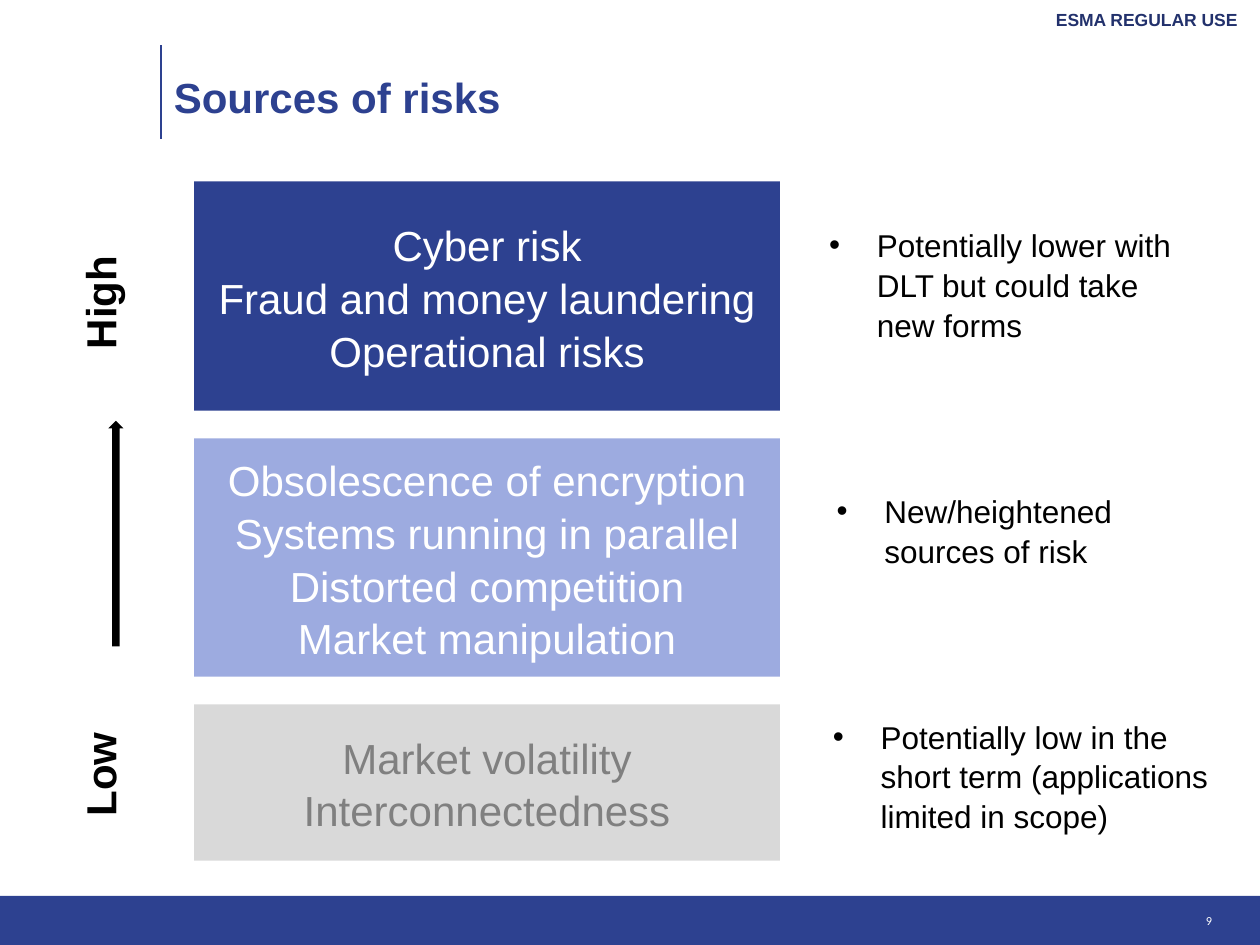
from dataclasses import dataclass

from lxml.etree import SubElement
from pptx import Presentation
from pptx.dml.color import RGBColor
from pptx.enum.shapes import MSO_CONNECTOR, MSO_SHAPE
from pptx.enum.text import MSO_ANCHOR, PP_ALIGN
from pptx.oxml.ns import qn
from pptx.util import Inches, Pt

NAVY = "2D4190"
BLACK = "000000"
WHITE = "FFFFFF"
LINE_SPACING = 1.05


@dataclass
class Area:
    left: float
    top: float
    width: float
    height: float

    def lengths(self) -> tuple:
        return tuple(Inches(n) for n in (self.left, self.top, self.width, self.height))


@dataclass
class Style:
    size: float
    color: str
    bold: bool = False
    font: str = "Arial"
    align: PP_ALIGN = PP_ALIGN.LEFT


@dataclass
class RiskLevel:
    top: float
    height: float
    fill: str
    text_color: str
    risks: list[str]
    note: str
    note_area: Area


LEVELS = [
    RiskLevel(1.44, 1.82, NAVY, WHITE,
              ["Cyber risk", "Fraud and money laundering", "Operational risks"],
              "Potentially lower with DLT but could take new forms",
              Area(6.58, 1.78, 2.84, 0.89)),
    RiskLevel(3.48, 1.89, "9DABE0", WHITE,
              ["Obsolescence of encryption", "Systems running in parallel",
               "Distorted competition", "Market manipulation"],
              "New/heightened sources of risk",
              Area(6.64, 3.89, 3, 0.56)),
    RiskLevel(5.59, 1.24, "D9D9D9", "808080",
              ["Market volatility", "Interconnectedness"],
              "Potentially low in the short term (applications limited in scope)",
              Area(6.61, 5.68, 3, 0.56)),
]

SCALE_LABELS = [("High", Area(0.59, 1.88, 0.4, 0.89)), ("Low", Area(0.59, 5.45, 0.4, 1.03))]


def rgb(color: str) -> RGBColor:
    return RGBColor.from_string(color)


def write(para, text: str, style: Style) -> None:
    para.alignment = style.align
    span = para.add_run()
    span.text = text
    span.font.name = style.font
    span.font.size = Pt(style.size)
    span.font.bold = style.bold
    span.font.color.rgb = rgb(style.color)


def clear_margins(frame) -> None:
    frame.margin_left = frame.margin_top = frame.margin_right = frame.margin_bottom = 0
    frame.word_wrap = True


def add_text(page, area: Area, text: str, style: Style):
    box = page.shapes.add_textbox(*area.lengths())
    clear_margins(box.text_frame)
    write(box.text_frame.paragraphs[0], text, style)
    return box


def add_block(page, kind: MSO_SHAPE, area: Area, fill: str):
    block = page.shapes.add_shape(kind, *area.lengths())
    block.shadow.inherit = False
    block.fill.solid()
    block.fill.fore_color.rgb = rgb(fill)
    block.line.fill.background()
    return block


def add_note(page, level: RiskLevel) -> None:
    box = add_text(page, level.note_area, level.note, Style(18, BLACK))
    para = box.text_frame.paragraphs[0]
    para.line_spacing = LINE_SPACING
    properties = para._p.get_or_add_pPr()
    properties.set("marL", str(Inches(0.38)))
    properties.set("indent", str(Inches(-0.38)))
    SubElement(properties, qn("a:buFont")).set("typeface", "Arial")
    SubElement(properties, qn("a:buChar")).set("char", "•")


def add_level(page, level: RiskLevel) -> None:
    block = add_block(page, MSO_SHAPE.RECTANGLE,
                      Area(1.54, level.top, 4.65, level.height), level.fill)
    frame = block.text_frame
    frame.word_wrap = True
    frame.vertical_anchor = MSO_ANCHOR.MIDDLE
    style = Style(24, level.text_color, align=PP_ALIGN.CENTER)
    for index, risk in enumerate(level.risks):
        para = frame.add_paragraph() if index else frame.paragraphs[0]
        para.line_spacing = LINE_SPACING
        write(para, risk, style)


def add_rule(page) -> None:
    rule = page.shapes.add_connector(
        MSO_CONNECTOR.STRAIGHT, Inches(1.28), Inches(1.1), Inches(1.28), Inches(0.36))
    rule.line.color.rgb = rgb(NAVY)
    rule.line.width = Pt(1)
    SubElement(rule._element.spPr, qn("a:effectLst"))


def set_title(page, text: str) -> None:
    title = page.shapes.title
    title.left, title.top, title.width, title.height = Area(1.38, 0.53, 8.27, 0.47).lengths()
    clear_margins(title.text_frame)
    title.text_frame.vertical_anchor = MSO_ANCHOR.MIDDLE
    write(title.text_frame.paragraphs[0], text, Style(24, NAVY, bold=True))


def main() -> None:
    deck = Presentation()
    deck.slide_width, deck.slide_height = Inches(10), Inches(7.5)
    page = deck.slides.add_slide(deck.slide_layouts[5])

    add_block(page, MSO_SHAPE.RECTANGLE, Area(0, 7.11, 10, 0.39), NAVY)
    add_rule(page)
    add_text(page, Area(6.65, 0.07, 3.17, 0.16), "ESMA REGULAR USE",
             Style(10, "22316C", bold=True, align=PP_ALIGN.RIGHT))
    set_title(page, "Sources of risks")
    add_text(page, Area(8.05, 7.25, 1.57, 0.11), "9",
             Style(7, WHITE, font="Calibri", align=PP_ALIGN.RIGHT))

    for level in LEVELS:
        add_level(page, level)
        add_note(page, level)

    for text, area in SCALE_LABELS:
        label = add_text(page, area, text, Style(24, BLACK, bold=True))
        label.text_frame._txBody.bodyPr.set("vert", "vert270")
    add_block(page, MSO_SHAPE.UP_ARROW, Area(0.86, 3.34, 0.12, 1.79), BLACK)

    deck.save("out.pptx")


if __name__ == "__main__":
    main()
